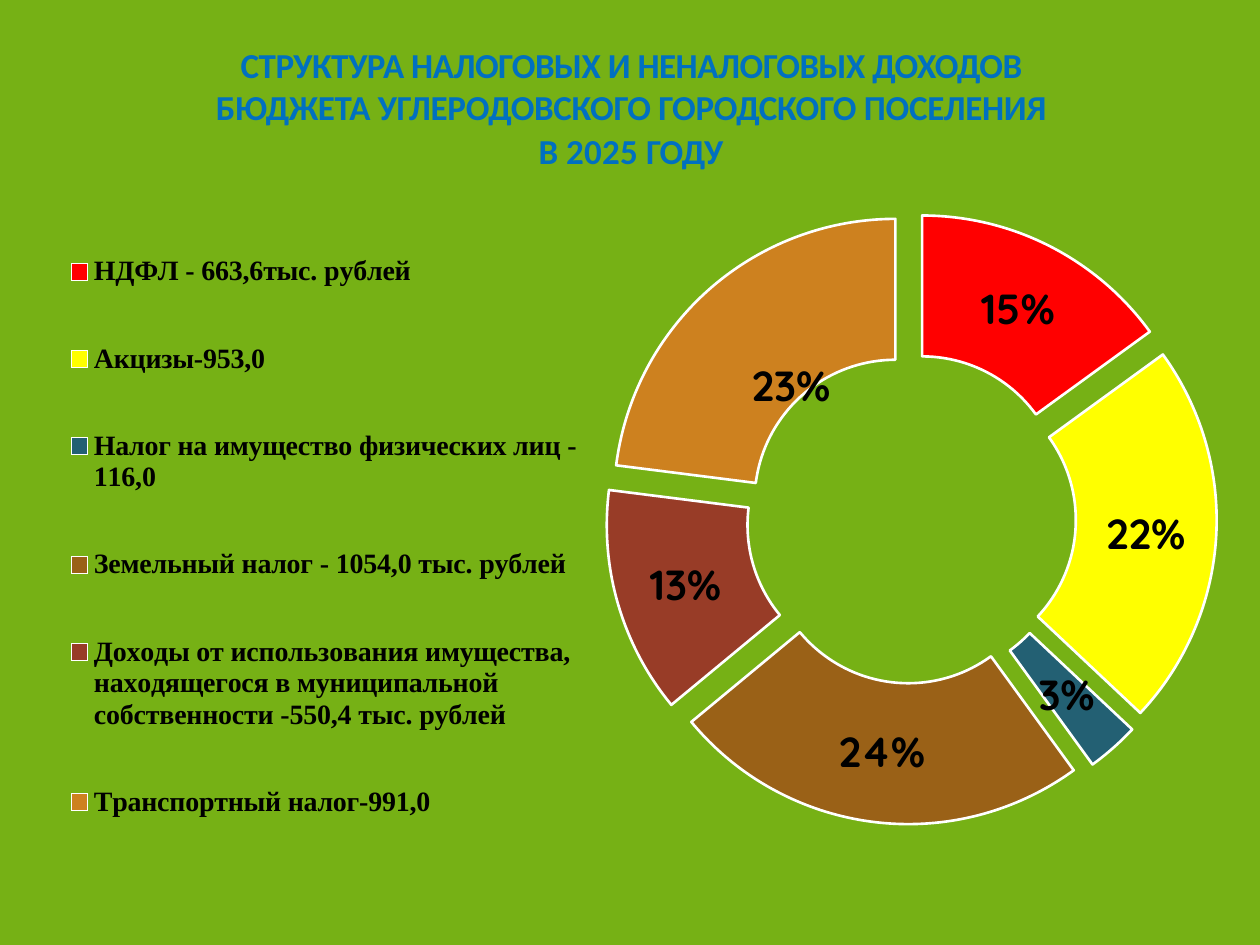
import lxml.etree
import pptx
import pptx.chart.data
import pptx.dml.color
import pptx.enum.chart
import pptx.enum.shapes
import pptx.enum.text
import pptx.oxml.ns
import pptx.util

PX = 914400 // 126
PAGE_SIZE = (1260, 945)
TITLE_ONLY = 5
HOLE_PERCENT = 61
EXPLOSION = 17

THEME = {
    "background": "76B115",
    "border": "FFFFFF",
    "title": {"name": "Calibri", "size": 20, "bold": True, "color": "0070C0"},
    "chart": {"name": "Quicksand", "size": 10, "color": "FFFFFF"},
    "legend": {"name": "Times New Roman", "size": 16, "bold": True, "color": "000000"},
    "label": {"name": "Quicksand", "size": 24, "bold": True, "color": "000000"},
}

TITLE = [
    [("СТРУКТУРА НАЛОГОВЫХ И НЕНАЛОГОВЫХ ДОХОДОВ ", -30),
     ("БЮДЖЕТА УГЛЕРОДОВСКОГО ГОРОДСКОГО ПОСЕЛЕНИЯ", -20)],
    [("В ", 0), ("2025 ", 10), ("ГОДУ", -40)],
]

REVENUES = [
    ("НДФЛ - 663,6тыс. рублей", 15, "FF0000"),
    ("Акцизы-953,0", 22, "FFFF00"),
    ("Налог на имущество физических лиц - 116,0", 3, "236073"),
    ("Земельный налог - 1054,0 тыс. рублей", 24, "9A6117"),
    ("Доходы от использования имущества, находящегося в муниципальной "
     "собственности -550,4 тыс. рублей", 13, "983C27"),
    ("Транспортный налог-991,0", 23, "CD811F"),
]


def px(*lengths):
    return [pptx.util.Emu(length * PX) for length in lengths]


def rgb(value):
    return pptx.dml.color.RGBColor.from_string(value)


def set_attributes(target, values):
    for name, value in values.items():
        setattr(target, name, value)


def format_font(font, style):
    values = dict(style, size=pptx.util.Pt(style["size"]))
    font.color.rgb = rgb(values.pop("color"))
    set_attributes(font, values)


def paint(fill, color):
    fill.solid()
    fill.fore_color.rgb = rgb(color)


def add_backdrop(page):
    paint(page.background.fill, THEME["background"])
    panel = page.shapes.add_shape(
        pptx.enum.shapes.MSO_SHAPE.RECTANGLE, *px(0, 0, *PAGE_SIZE))
    panel.shadow.inherit = False
    paint(panel.fill, THEME["background"])
    panel.line.fill.background()
    page.shapes.title.element.addprevious(panel.element)


def fill_title(page):
    title = page.shapes.title
    left, top, width, height = px(173, 42, 916, 131)
    set_attributes(title, {"left": left, "top": top, "width": width, "height": height})
    frame = title.text_frame
    set_attributes(frame, {
        "margin_left": 0, "margin_right": 0, "margin_bottom": 0,
        "margin_top": pptx.util.Pt(1),
        "word_wrap": True,
        "auto_size": pptx.enum.text.MSO_AUTO_SIZE.SHAPE_TO_FIT_TEXT,
        "vertical_anchor": pptx.enum.text.MSO_ANCHOR.TOP,
    })
    for index, pieces in enumerate(TITLE):
        para = frame.add_paragraph() if index else frame.paragraphs[0]
        set_attributes(para, {
            "alignment": pptx.enum.text.PP_ALIGN.CENTER,
            "space_before": pptx.util.Pt(1 if index else 0),
        })
        for text, spacing in pieces:
            span = para.add_run()
            span.text = text
            format_font(span.font, THEME["title"])
            span.font._element.set("spc", str(spacing))


def chart_element(tag, value=None):
    element = lxml.etree.Element(pptx.oxml.ns.qn(f"c:{tag}"))
    if value is not None:
        element.set("val", str(value))
    return element


def place_layout(parent, index, settings):
    for old in parent.findall(pptx.oxml.ns.qn("c:layout")):
        parent.remove(old)
    layout = chart_element("layout")
    manual = chart_element("manualLayout")
    layout.append(manual)
    for tag, value in settings.items():
        manual.append(chart_element(tag, value))
    parent.insert(index, layout)


def format_labels(series):
    labels = series.data_labels
    set_attributes(labels, {
        "show_percentage": True, "show_value": False,
        "number_format": "0%", "number_format_is_linked": False,
    })
    format_font(labels.font, THEME["label"])

    last = len(REVENUES) - 1
    format_font(series.points[last].data_label.font, THEME["label"])
    shifted = labels._element.find(pptx.oxml.ns.qn("c:dLbl"))
    place_layout(shifted, 1, {"x": 0.03, "y": 0.06})
    for tag, value in (("showVal", 0), ("showPercent", 1)):
        shifted.find(pptx.oxml.ns.qn(f"c:{tag}")).set("val", str(value))


def format_slices(series):
    line = series.format.line
    line.color.rgb = rgb(THEME["border"])
    line.width = pptx.util.Pt(1.5)
    shape_properties = series._element.find(pptx.oxml.ns.qn("c:spPr"))
    shape_properties.addnext(chart_element("explosion", EXPLOSION))
    for index, (_, _, color) in enumerate(REVENUES):
        style = series.points[index].format
        paint(style.fill, color)
        style.line.color.rgb = rgb(THEME["border"])
        style.line.width = pptx.util.Pt(1.5)


def add_doughnut(page):
    data = pptx.chart.data.CategoryChartData()
    data.categories = [name for name, _, _ in REVENUES]
    data.add_series("Series 1", [share for _, share, _ in REVENUES])
    chart = page.shapes.add_chart(
        pptx.enum.chart.XL_CHART_TYPE.DOUGHNUT, *px(42, 171, 1176, 732), data).chart
    set_attributes(chart, {"has_title": False, "has_legend": True})
    format_font(chart.font, THEME["chart"])

    plot = chart.plots[0]
    plot.vary_by_categories = True
    hole = plot._element.find(pptx.oxml.ns.qn("c:holeSize"))
    hole.set("val", str(HOLE_PERCENT))
    format_slices(plot.series[0])
    format_labels(plot.series[0])

    legend = chart.legend
    set_attributes(legend, {
        "position": pptx.enum.chart.XL_LEGEND_POSITION.BOTTOM,
        "include_in_layout": False,
    })
    format_font(legend.font, THEME["legend"])
    edges = {"xMode": "edge", "yMode": "edge"}
    place_layout(legend._element, 1,
                 {**edges, "x": 0.02, "y": 0.04, "w": 0.44, "h": 0.92})
    place_layout(plot._element.getparent(), 0,
                 {"layoutTarget": "inner", **edges,
                  "x": 0.48, "y": 0.03, "w": 0.52, "h": 0.89})


def main():
    deck = pptx.Presentation()
    deck.slide_width, deck.slide_height = px(*PAGE_SIZE)
    page = deck.slides.add_slide(deck.slide_layouts[TITLE_ONLY])
    add_backdrop(page)
    fill_title(page)
    add_doughnut(page)
    deck.save("out.pptx")


if __name__ == "__main__":
    main()
